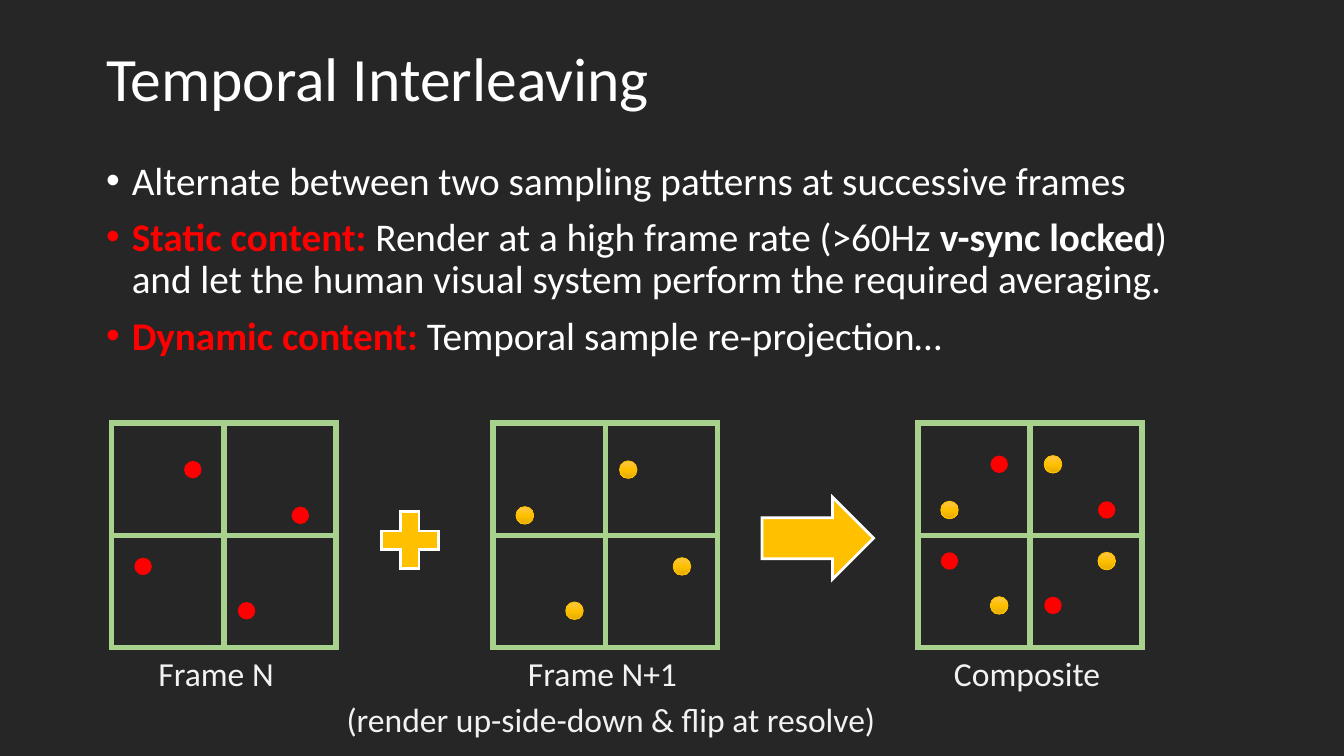
from copy import deepcopy

from lxml.etree import SubElement
from pptx import Presentation
from pptx.dml.color import RGBColor
from pptx.enum.shapes import MSO_CONNECTOR, MSO_SHAPE
from pptx.enum.text import MSO_ANCHOR, MSO_AUTO_SIZE, PP_ALIGN
from pptx.oxml.ns import qn
from pptx.util import Inches, Pt

SLIDE_WIDTH = 10
SLIDE_HEIGHT = SLIDE_WIDTH * 9 / 16

COLORS = {
    "background": "262626", "text": "FFFFFF", "caption": "F2F2F2",
    "red": "FF0000", "gold": "FFC000", "gold_light": "FFC64B",
    "gold_dark": "E3AB00", "grid": "A9D18E",
}
FONT = "Calibri"

TITLE = "Temporal Interleaving"
# Each bullet is a list of (text, colour, bold); "\n" breaks the line.
BULLETS = [
    [("Alternate between two sampling patterns at successive frames", "text", False)],
    [("Static content: ", "red", True),
     ("Render at a high frame rate (>60Hz ", "text", False),
     ("v-sync locked", "text", True),
     (") \nand let the human visual system perform the required averaging.", "text", False)],
    [("Dynamic content: ", "red", True),
     ("Temporal sample re-projection…", "text", False)],
]

# Sample positions inside a frame; a pattern names the row used in each column.
SAMPLE_COLUMNS = [0.17, 0.54, 0.94, 1.34]
SAMPLE_ROWS = [0.28, 0.62, 1.0, 1.33]
RED_PATTERN = [2, 0, 3, 1]
GOLD_PATTERN = [len(SAMPLE_ROWS) - 1 - row for row in RED_PATTERN]  # upside down
PATTERNS = {"red": RED_PATTERN, "gold": GOLD_PATTERN}

# (left, sample colours, vertical shift of the samples)
FRAMES = [(0.83, ["red"], 0), (3.67, ["gold"], 0), (6.83, ["red", "gold"], -0.04)]
FRAME_TOP, FRAME_SIZE, DOT_SIZE = 3.15, 1.67, 0.13

CAPTIONS = [
    ("Frame N", 1.08, 4.81, 1.08),
    ("Frame N+1", 3.83, 4.81, 1.32),
    ("Composite", 7.0, 4.81, 1.3),
    ("(render up-side-down & flip at resolve)", 2.48, 5.15, 4.19),
]
OPERATORS = [
    (MSO_SHAPE.RIGHT_ARROW, (5.67, 3.7, 0.83, 0.61)),
    (MSO_SHAPE.MATH_PLUS, (2.76, 3.73, 0.58, 0.58)),
]


def rgb(name):
    return RGBColor.from_string(COLORS[name])


def inches(*lengths):
    return [Inches(length) for length in lengths]


def place(shape, *box):
    shape.left, shape.top, shape.width, shape.height = inches(*box)


def add_run(paragraph, text, size, color, bold=False):
    run = paragraph.add_run()
    run.text = text
    run.font.name, run.font.size, run.font.bold = FONT, Pt(size), bold
    run.font.color.rgb = rgb(color)


def outline(shape, color, width):
    """Draw the line with sharp corners."""
    shape.line.color.rgb = rgb(color)
    shape.line.width = Pt(width)
    SubElement(shape._element.spPr.find(qn("a:ln")), qn("a:miter"), lim="800000")


def add_solid(shapes, preset, box, color):
    shape = shapes.add_shape(preset, *inches(*box))
    shape.shadow.inherit = False
    shape.fill.solid()
    shape.fill.fore_color.rgb = rgb(color)
    return shape


def add_title(slide):
    title = slide.shapes.title
    place(title, 0.69, 0.06, 8.62, 1.09)
    title.text_frame.vertical_anchor = MSO_ANCHOR.MIDDLE
    title.text_frame.auto_size = MSO_AUTO_SIZE.NONE
    paragraph = title.text_frame.paragraphs[0]
    paragraph.alignment = PP_ALIGN.LEFT
    paragraph.line_spacing = 0.9
    add_run(paragraph, TITLE, 33, "text")


def add_bullets(slide):
    body = slide.placeholders[1]
    place(body, 0.69, 1.15, 8.62, 3.57)
    frame = body.text_frame
    frame.auto_size = MSO_AUTO_SIZE.NONE
    for index, runs in enumerate(BULLETS):
        paragraph = frame.add_paragraph() if index else frame.paragraphs[0]
        properties = paragraph._p.get_or_add_pPr()
        properties.set("marL", str(Inches(0.19)))
        properties.set("indent", str(-Inches(0.19)))
        SubElement(properties, qn("a:buFont"), typeface="Arial")
        SubElement(properties, qn("a:buChar"), char="•")
        paragraph.line_spacing = 0.9
        paragraph.space_before = Pt(7.5 if index else 0)
        for text, color, bold in runs:
            for line_number, line in enumerate(text.split("\n")):
                if line_number:
                    paragraph.add_line_break()
                add_run(paragraph, line, 21, color, bold)


def shade_gold(dot):
    """Give a sample a three-stop gradient from light at the top to dark."""
    dot.fill.gradient()
    stops = dot._element.spPr.find(".//" + qn("a:gsLst"))
    stops.insert(1, deepcopy(stops[0]))
    dot.fill.gradient_angle = 270
    shades = [(0, "gold_light"), (0.5, "gold"), (1, "gold_dark")]
    for stop, (position, color) in zip(dot.fill.gradient_stops, shades):
        stop.position = position
        stop.color.rgb = rgb(color)
    outline(dot, "gold", 0.5)


def add_samples(slide, left, top, color):
    samples = slide.shapes.add_group_shape().shapes
    for column, row in zip(SAMPLE_COLUMNS, PATTERNS[color]):
        box = (left + column, top + SAMPLE_ROWS[row], DOT_SIZE, DOT_SIZE)
        dot = add_solid(samples, MSO_SHAPE.OVAL, box, color)
        if color == "gold":
            shade_gold(dot)
        else:
            dot.line.fill.background()


def add_frame(slide, left, sample_colors, shift):
    border = slide.shapes.add_shape(
        MSO_SHAPE.RECTANGLE, *inches(left, FRAME_TOP, FRAME_SIZE, FRAME_SIZE))
    border.shadow.inherit = False
    border.fill.background()
    outline(border, "grid", 3)
    for start, end in [(1, 3), (0, 2)]:  # left to right, top to bottom
        divider = slide.shapes.add_connector(MSO_CONNECTOR.STRAIGHT, 0, 0, 0, 0)
        divider.begin_connect(border, start)
        divider.end_connect(border, end)
        outline(divider, "grid", 3)
        SubElement(divider._element.spPr, qn("a:effectLst"))
    for color in sample_colors:
        add_samples(slide, left, FRAME_TOP + shift, color)


def add_caption(slide, text, left, top, width):
    caption = slide.shapes.add_textbox(*inches(left, top, width, 0.4))
    caption.text_frame.word_wrap = False
    caption.text_frame.auto_size = MSO_AUTO_SIZE.SHAPE_TO_FIT_TEXT
    add_run(caption.text_frame.paragraphs[0], text, 18, "caption")


def main():
    presentation = Presentation()
    presentation.slide_width, presentation.slide_height = inches(SLIDE_WIDTH, SLIDE_HEIGHT)
    slide = presentation.slides.add_slide(presentation.slide_layouts[1])
    slide.background.fill.solid()
    slide.background.fill.fore_color.rgb = rgb("background")

    add_title(slide)
    add_bullets(slide)
    for frame in FRAMES:
        add_frame(slide, *frame)
    for caption in CAPTIONS:
        add_caption(slide, *caption)
    for preset, box in OPERATORS:
        outline(add_solid(slide.shapes, preset, box, "gold"), "text", 1.5)
    presentation.save("out.pptx")


if __name__ == "__main__":
    main()
